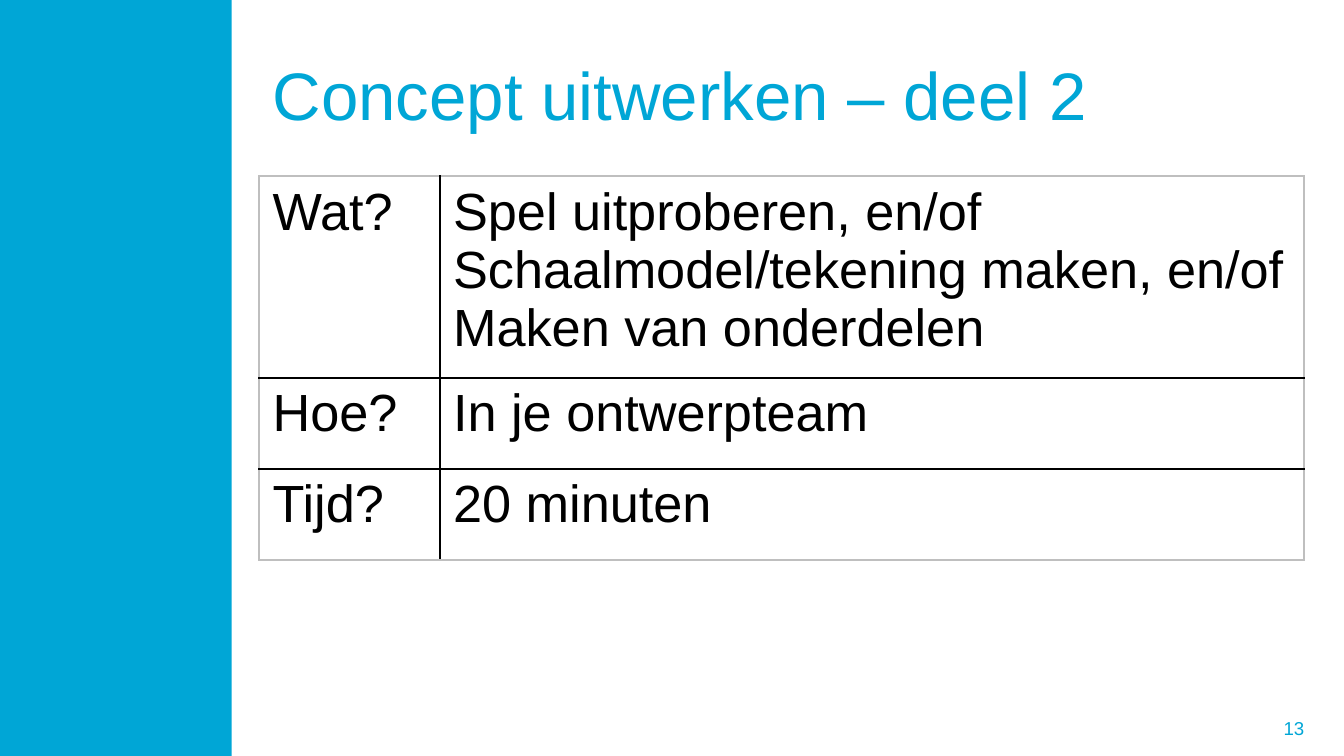
import pptx
import pptx.util
import pptx.dml.color
import pptx.enum.shapes
import pptx.enum.text
from lxml import etree
from pptx.util import Cm, Pt

RGBColor = pptx.dml.color.RGBColor
Align = pptx.enum.text.PP_ALIGN
Anchor = pptx.enum.text.MSO_ANCHOR

# Content
TITLE = "Concept uitwerken – deel 2"
PAGE_NUMBER = "13"
ROWS = [
    ("Wat?", ["Spel uitproberen, en/of",
              "Schaalmodel/tekening maken, en/of",
              "Maken van onderdelen"]),
    ("Hoe?", ["In je ontwerpteam"]),
    ("Tijd?", ["20 minuten"]),
]

# Style and layout
CYAN = RGBColor(0x00, 0xA6, 0xD6)
BLACK = RGBColor(0x00, 0x00, 0x00)
GREY = RGBColor(0xBF, 0xBF, 0xBF)
FONT = "Arial"
CONTENT_LEFT = Cm(4.9)
COLUMN_WIDTHS = [Cm(3.41), Cm(16.33)]
ROW_HEIGHTS = [Cm(3.55), Cm(1.72), Cm(1.72)]
CONTENT_WIDTH = sum(COLUMN_WIDTHS)


def write_text(frame, lines, size=28, color=BLACK, align=Align.LEFT):
    """Fill a text frame with one paragraph per line."""
    frame.word_wrap = True
    for index, line in enumerate(lines):
        para = frame.paragraphs[0] if index == 0 else frame.add_paragraph()
        para.alignment = align
        span = para.add_run()
        span.text = line
        span.font.name = FONT
        span.font.size = Pt(size)
        span.font.color.rgb = color


def add_border(cell, side, color):
    """Draw a one-point line on one side (L, R, T or B) of a cell."""
    namespace = pptx.oxml.ns.nsdecls("a")
    cell._tc.get_or_add_tcPr().append(etree.fromstring(
        f'<a:ln{side} {namespace} w="12700"><a:solidFill>'
        f'<a:srgbClr val="{color}"/></a:solidFill></a:ln{side}>'))


deck = pptx.Presentation()
deck.slide_width, deck.slide_height = Cm(25.4), Cm(14.29)
page = deck.slides.add_slide(deck.slide_layouts[5])

# Side band
band = page.shapes.add_shape(pptx.enum.shapes.MSO_SHAPE.RECTANGLE,
                             0, 0, Cm(4.38), deck.slide_height)
band.shadow.inherit = False
band.fill.solid()
band.fill.fore_color.rgb = CYAN
band.line.fill.background()

# Title
title = page.shapes.title
title.left, title.top = CONTENT_LEFT, Cm(0.58)
title.width, title.height = CONTENT_WIDTH, Cm(2.39)
title.text_frame.vertical_anchor = Anchor.MIDDLE
write_text(title.text_frame, [TITLE], size=36, color=CYAN)

# Page number
number = page.shapes.add_textbox(Cm(18.47), Cm(13.39), Cm(6.43), Cm(0.76))
number.text_frame.vertical_anchor = Anchor.MIDDLE
write_text(number.text_frame, [PAGE_NUMBER], size=10, color=CYAN,
           align=Align.RIGHT)

# Table: black inner lines, grey outer lines
table = page.shapes.add_table(len(ROWS), len(COLUMN_WIDTHS), CONTENT_LEFT,
                              Cm(3.33), CONTENT_WIDTH, sum(ROW_HEIGHTS)).table
table.first_row = False
table.horz_banding = False
for column, width in zip(table.columns, COLUMN_WIDTHS):
    column.width = width
for row, height in zip(table.rows, ROW_HEIGHTS):
    row.height = height

last_row, last_column = len(ROWS) - 1, len(COLUMN_WIDTHS) - 1
for r, (label, lines) in enumerate(ROWS):
    for c, cell_lines in enumerate([[label], lines]):
        cell = table.cell(r, c)
        write_text(cell.text_frame, cell_lines)
        outer_sides = {"L": c == 0, "R": c == last_column,
                       "T": r == 0, "B": r == last_row}
        for side, is_outer in outer_sides.items():
            add_border(cell, side, GREY if is_outer else BLACK)
        cell.fill.background()

deck.save("out.pptx")
